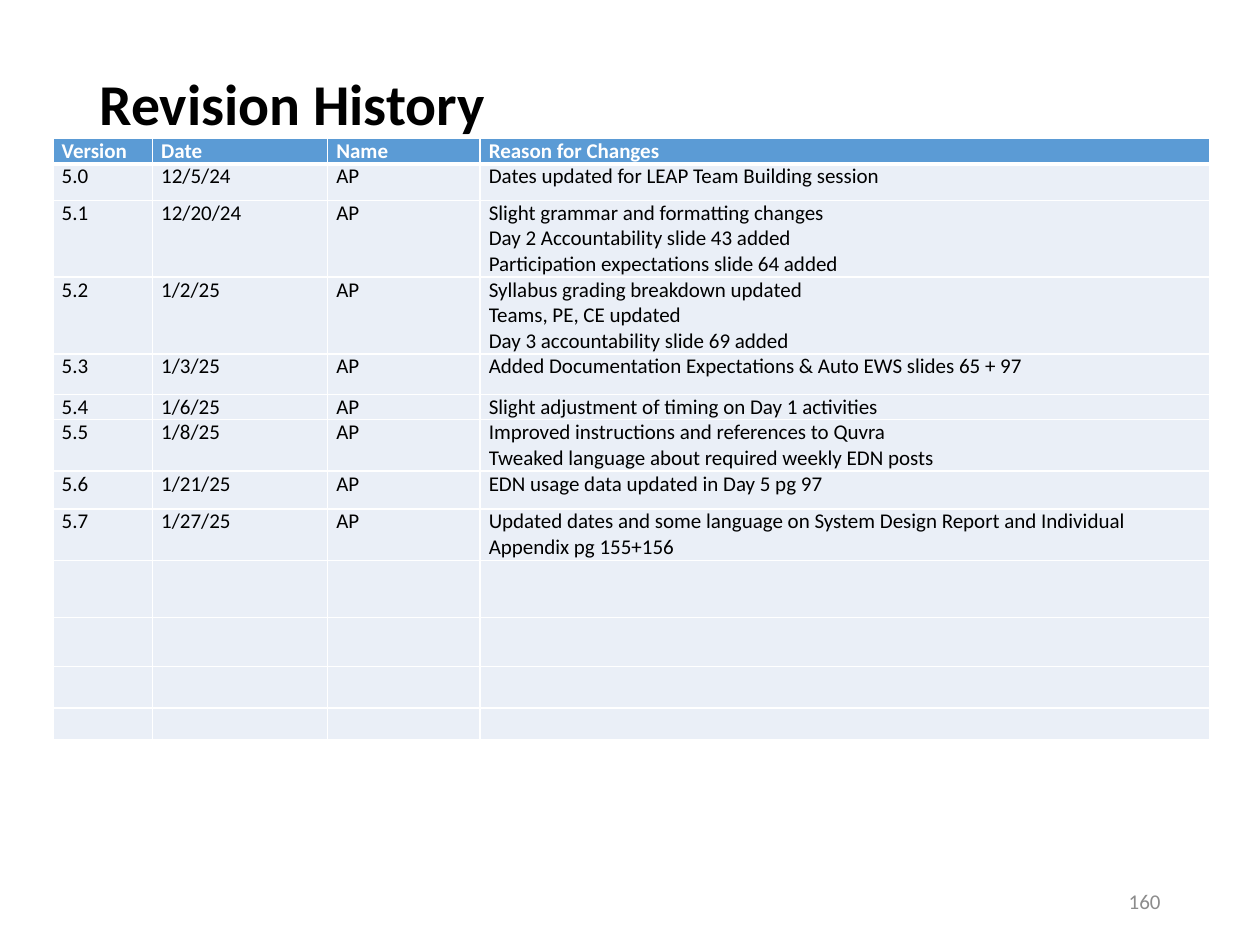
from dataclasses import dataclass

from lxml import etree
from pptx import Presentation
from pptx.dml.color import RGBColor
from pptx.enum.text import MSO_ANCHOR, PP_ALIGN
from pptx.oxml.ns import qn
from pptx.util import Inches, Pt

TOP, MIDDLE = MSO_ANCHOR.TOP, MSO_ANCHOR.MIDDLE
LEFT, RIGHT = PP_ALIGN.LEFT, PP_ALIGN.RIGHT
BLANK_LAYOUT = 6


@dataclass(frozen=True)
class Theme:
    font: str = "Calibri"
    title_size: int = 33
    body_size: int = 12
    ink: str = "000000"
    muted: str = "8C8C8C"
    white: str = "FFFFFF"
    header_fill: str = "5B9BD5"
    row_fill: str = "EAEFF7"
    thin_rule: int = 1
    thick_rule: int = 3


THEME = Theme()
SLIDE_WIDTH, SLIDE_HEIGHT = 10, 7.5
TABLE_LEFT, TABLE_TOP = 0.42, 1.1
COLUMN_WIDTHS = [0.79, 1.39, 1.21, 5.79]
CELL_MARGINS = {"margin_left": Inches(0.07), "margin_right": Inches(0.07),
                "margin_top": 0, "margin_bottom": 0}

HEADINGS = ["Version", "Date", "Name", "Reason for Changes"]
AUTHOR = "AP"
# Row height, version, date, reasons
REVISIONS = [
    (0.29, "5.0", "12/5/24", ["Dates updated for LEAP Team Building session"]),
    (0.61, "5.1", "12/20/24", ["Slight grammar and formatting changes",
                               "Day 2 Accountability slide 43 added",
                               "Participation expectations slide 64 added"]),
    (0.61, "5.2", "1/2/25", ["Syllabus grading breakdown updated",
                             "Teams, PE, CE updated",
                             "Day 3 accountability slide 69 added"]),
    (0.32, "5.3", "1/3/25",
     ["Added Documentation Expectations & Auto EWS slides 65 + 97"]),
    (0.2, "5.4", "1/6/25", ["Slight adjustment of timing on Day 1 activities"]),
    (0.41, "5.5", "1/8/25", ["Improved instructions and references to Quvra",
                             "Tweaked language about required weekly EDN posts"]),
    (0.3, "5.6", "1/21/25", ["EDN usage data updated in Day 5 pg 97"]),
    (0.41, "5.7", "1/27/25",
     ["Updated dates and some language on System Design Report and "
      "Individual Appendix pg 155+156"]),
]
HEADER_HEIGHT = 0.2
SPARE_HEIGHTS = [0.45, 0.39, 0.33, 0.25]


def apply_format(target, values):
    for name, value in values.items():
        setattr(target, name, value)


def write_span(para, text, size, color, bold=False):
    span = para.add_run()
    span.text = text
    apply_format(span.font, {"name": THEME.font, "size": Pt(size), "bold": bold})
    span.font.color.rgb = RGBColor.from_string(color)


def add_label(page, place, text, size, color, bold=False, frame_format=None,
              para_format=None):
    """Add a one-paragraph text box; place is left, top, width, height in inches."""
    box = page.shapes.add_textbox(*map(Inches, place))
    frame = box.text_frame
    apply_format(frame, {"word_wrap": True, **(frame_format or {})})
    para = frame.paragraphs[0]
    apply_format(para, para_format or {})
    write_span(para, text, size, color, bold)


def draw_borders(cell, bottom_width):
    properties = cell._tc.get_or_add_tcPr()
    widths = {"lnL": THEME.thin_rule, "lnR": THEME.thin_rule,
              "lnT": THEME.thin_rule, "lnB": bottom_width}
    for side, width in widths.items():
        line = etree.SubElement(properties, qn(f"a:{side}"), w=str(Pt(width)))
        fill = etree.SubElement(line, qn("a:solidFill"))
        etree.SubElement(fill, qn("a:srgbClr"), val=THEME.white)


def fill_cell(cell, lines, is_header):
    draw_borders(cell, THEME.thick_rule if is_header else THEME.thin_rule)
    cell.fill.solid()
    cell.fill.fore_color.rgb = RGBColor.from_string(
        THEME.header_fill if is_header else THEME.row_fill)
    apply_format(cell, CELL_MARGINS)
    frame = cell.text_frame
    if not lines:
        # Keeps an empty row from growing to the default type size
        ending = frame.paragraphs[0]._p.get_or_add_endParaRPr()
        ending.set("sz", str(THEME.body_size * 100))
    for index, line in enumerate(lines):
        para = frame.add_paragraph() if index else frame.paragraphs[0]
        write_span(para, line, THEME.body_size,
                   THEME.white if is_header else THEME.ink, is_header)


def add_revision_table(page):
    rows = [(HEADER_HEIGHT, [[heading] for heading in HEADINGS])]
    rows += [(height, [[version], [date], [AUTHOR], reasons])
             for height, version, date, reasons in REVISIONS]
    rows += [(height, [[] for _ in HEADINGS]) for height in SPARE_HEIGHTS]

    total_height = sum(height for height, _ in rows)
    table = page.shapes.add_table(
        len(rows), len(HEADINGS), Inches(TABLE_LEFT), Inches(TABLE_TOP),
        Inches(sum(COLUMN_WIDTHS)), Inches(total_height)).table
    for column, width in zip(table.columns, COLUMN_WIDTHS):
        column.width = Inches(width)
    for row_index, (height, contents) in enumerate(rows):
        row = table.rows[row_index]
        row.height = Inches(height)
        for cell, lines in zip(row.cells, contents):
            fill_cell(cell, lines, is_header=row_index == 0)


def main():
    deck = Presentation()
    deck.slide_width, deck.slide_height = Inches(SLIDE_WIDTH), Inches(SLIDE_HEIGHT)
    page = deck.slides.add_slide(deck.slide_layouts[BLANK_LAYOUT])

    add_label(page, (0.69, 0.4, 8.62, 1.45), "Revision History",
              THEME.title_size, THEME.ink, bold=True,
              frame_format={"vertical_anchor": TOP, "margin_top": Inches(0.2)},
              para_format={"alignment": LEFT, "line_spacing": 0.9})
    add_revision_table(page)
    add_label(page, (7.06, 6.95, 2.25, 0.4), "160", THEME.body_size, THEME.muted,
              frame_format={"vertical_anchor": MIDDLE},
              para_format={"alignment": RIGHT})
    deck.save("out.pptx")


if __name__ == "__main__":
    main()
